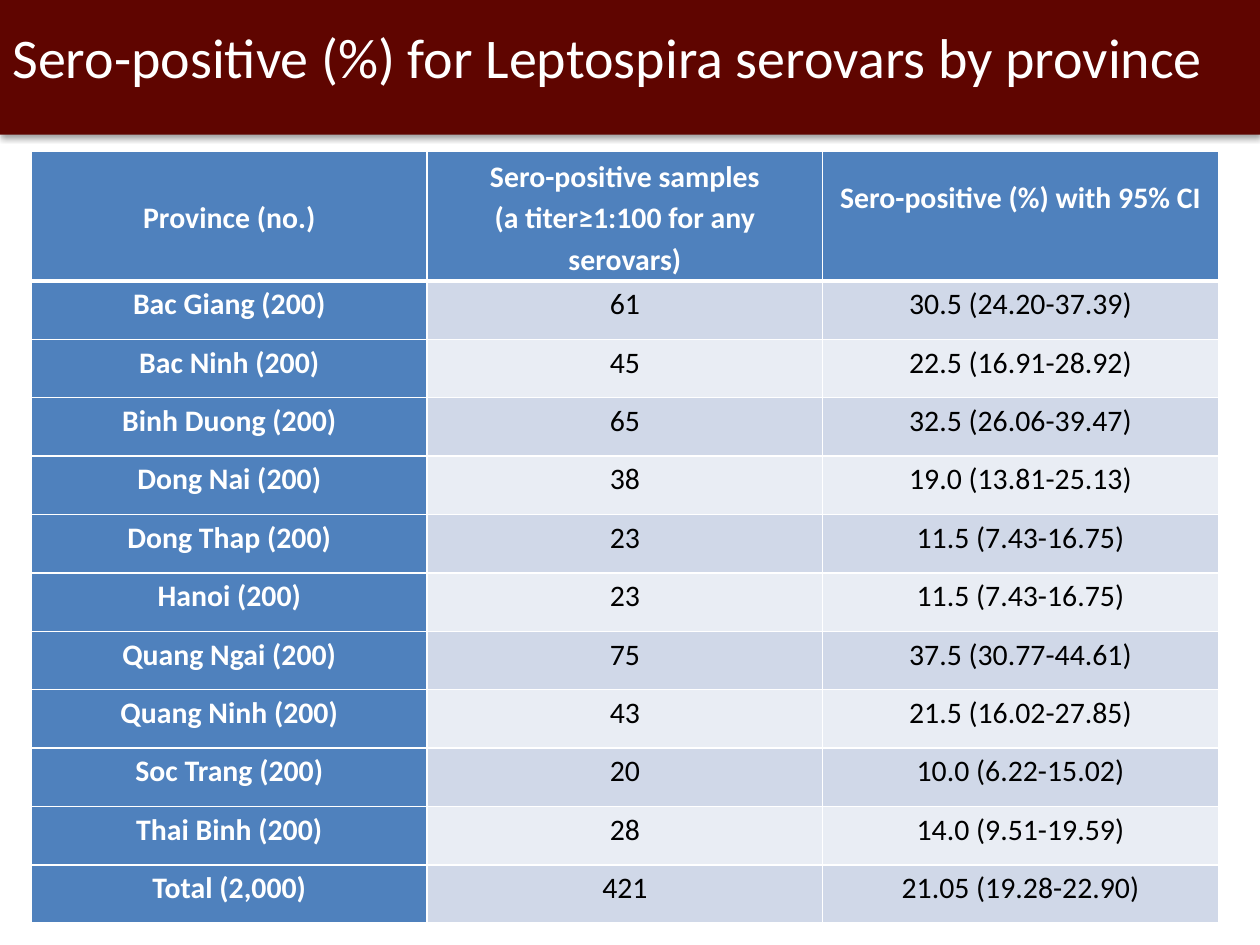
from dataclasses import dataclass

from lxml import etree
from pptx import Presentation
from pptx.dml.color import RGBColor
from pptx.enum.shapes import MSO_SHAPE
from pptx.enum.text import MSO_ANCHOR, PP_ALIGN
from pptx.oxml.ns import qn
from pptx.util import Inches, Pt

RECTANGLE = MSO_SHAPE.RECTANGLE
TOP, MIDDLE = MSO_ANCHOR.TOP, MSO_ANCHOR.MIDDLE
LEFT, CENTER = PP_ALIGN.LEFT, PP_ALIGN.CENTER


@dataclass(frozen=True)
class Theme:
    font: str = "Calibri"
    title_size: float = 32
    table_size: float = 17
    banner: str = "5F0500"
    heading: str = "4F81BD"
    bands: tuple = ("D0D8E8", "E9EDF4")
    light: str = "FFFFFF"
    dark: str = "000000"
    shadow: str = "000000"
    thin: float = 1
    thick: float = 3


HEADINGS = [
    ["Province (no.)"],
    ["Sero-positive samples", "(a titer≥1:100 for any serovars)"],
    ["Sero-positive (%) with 95% CI"],
]
PROVINCES = [
    ("Bac Giang (200)", "61", "30.5 (24.20-37.39)"),
    ("Bac Ninh (200)", "45", "22.5 (16.91-28.92)"),
    ("Binh Duong (200)", "65", "32.5 (26.06-39.47)"),
    ("Dong Nai (200)", "38", "19.0 (13.81-25.13)"),
    ("Dong Thap (200)", "23", "11.5 (7.43-16.75)"),
    ("Hanoi (200)", "23", "11.5 (7.43-16.75)"),
    ("Quang Ngai (200)", "75", "37.5 (30.77-44.61)"),
    ("Quang Ninh (200)", "43", "21.5 (16.02-27.85)"),
    ("Soc Trang (200)", "20", "10.0 (6.22-15.02)"),
    ("Thai Binh (200)", "28", "14.0 (9.51-19.59)"),
    ("Total (2,000)", "421", "21.05 (19.28-22.90)"),
]


def write_text(frame, lines, *, font, size, color, bold=False, align=LEFT,
               line_spacing=None, space_after=None):
    for index, line in enumerate(lines):
        para = frame.paragraphs[0] if index == 0 else frame.add_paragraph()
        para.alignment = align
        para.line_spacing = line_spacing
        if space_after is not None and index == len(lines) - 1:
            para.space_after = Pt(space_after)
        span = para.add_run()
        span.text = line
        span.font.name = font
        span.font.size = Pt(size)
        span.font.bold = bold
        span.font.color.rgb = RGBColor.from_string(color)


def add_color(parent, color):
    fill = etree.SubElement(parent, qn("a:solidFill"))
    return etree.SubElement(fill, qn("a:srgbClr"), val=color)


class PageBuilder:
    def __init__(self, page, theme):
        self.page = page
        self.theme = theme

    def banner(self, left, top, width, height):
        box = self.page.shapes.add_shape(
            RECTANGLE, Inches(left), Inches(top), Inches(width), Inches(height))
        box.fill.solid()
        box.fill.fore_color.rgb = RGBColor.from_string(self.theme.banner)
        box.line.fill.background()
        box.shadow.inherit = False
        effects = box.element.spPr.find(qn("a:effectLst"))
        shadow = etree.SubElement(
            effects, qn("a:outerShdw"), blurRad=str(Pt(3.1)), dist=str(Pt(1.8)),
            dir="5400000", rotWithShape="0")
        color = etree.SubElement(shadow, qn("a:srgbClr"), val=self.theme.shadow)
        etree.SubElement(color, qn("a:alpha"), val="35000")

    def title(self, text, left, top, width, height):
        box = self.page.shapes.add_textbox(
            Inches(left), Inches(top), Inches(width), Inches(height))
        box.text_frame.word_wrap = True
        write_text(box.text_frame, [text], font=self.theme.font,
                   size=self.theme.title_size, color=self.theme.light)

    def borders(self, cell, top, bottom):
        properties = cell._tc.get_or_add_tcPr()
        thin = self.theme.thin
        for side, width in (("lnL", thin), ("lnR", thin), ("lnT", top), ("lnB", bottom)):
            line = etree.SubElement(properties, qn(f"a:{side}"), w=str(Pt(width)))
            add_color(line, self.theme.light)

    def cell(self, cell, lines, *, fill, color, bold, anchor=TOP,
             top_border, bottom_border, bottom_margin=0):
        self.borders(cell, top_border, bottom_border)
        cell.fill.solid()
        cell.fill.fore_color.rgb = RGBColor.from_string(fill)
        cell.vertical_anchor = anchor
        cell.margin_left = cell.margin_right = Inches(0.07)
        cell.margin_top = 0
        cell.margin_bottom = Inches(bottom_margin)
        write_text(cell.text_frame, lines, font=self.theme.font,
                   size=self.theme.table_size, color=color, bold=bold,
                   align=CENTER, line_spacing=1.15, space_after=10)

    def table(self, headings, records, left, top, width, heading_height, row_height):
        theme = self.theme
        height = heading_height + row_height * len(records)
        table = self.page.shapes.add_table(
            len(records) + 1, len(headings), Inches(left), Inches(top),
            Inches(width), Inches(height)).table
        for column in table.columns:
            column.width = Inches(width / len(headings))
        for index, row in enumerate(table.rows):
            row.height = Inches(row_height if index else heading_height)

        for column, lines in enumerate(headings):
            self.cell(table.cell(0, column), lines, fill=theme.heading,
                      color=theme.light, bold=True, anchor=MIDDLE,
                      top_border=theme.thin, bottom_border=theme.thick,
                      bottom_margin=0.33 if column == 2 else 0)
        for row, record in enumerate(records, start=1):
            band = theme.bands[(row - 1) % 2]
            for column, text in enumerate(record):
                is_label = column == 0
                self.cell(table.cell(row, column), [text],
                          fill=theme.heading if is_label else band,
                          color=theme.light if is_label else theme.dark,
                          bold=is_label,
                          top_border=theme.thick if row == 1 else theme.thin,
                          bottom_border=theme.thin)


def main():
    deck = Presentation()
    deck.slide_width, deck.slide_height = Inches(10), Inches(7.5)
    page = deck.slides.add_slide(deck.slide_layouts[6])
    builder = PageBuilder(page, Theme())
    builder.banner(0, 0, 10, 1.07)
    builder.title("Sero-positive (%) for Leptospira serovars by province",
                  0, 0.13, 10, 0.64)
    builder.table(HEADINGS, PROVINCES, left=0.25, top=1.2, width=9.42,
                  heading_height=1.03, row_height=5.1 / len(PROVINCES))
    deck.save("out.pptx")


if __name__ == "__main__":
    main()
